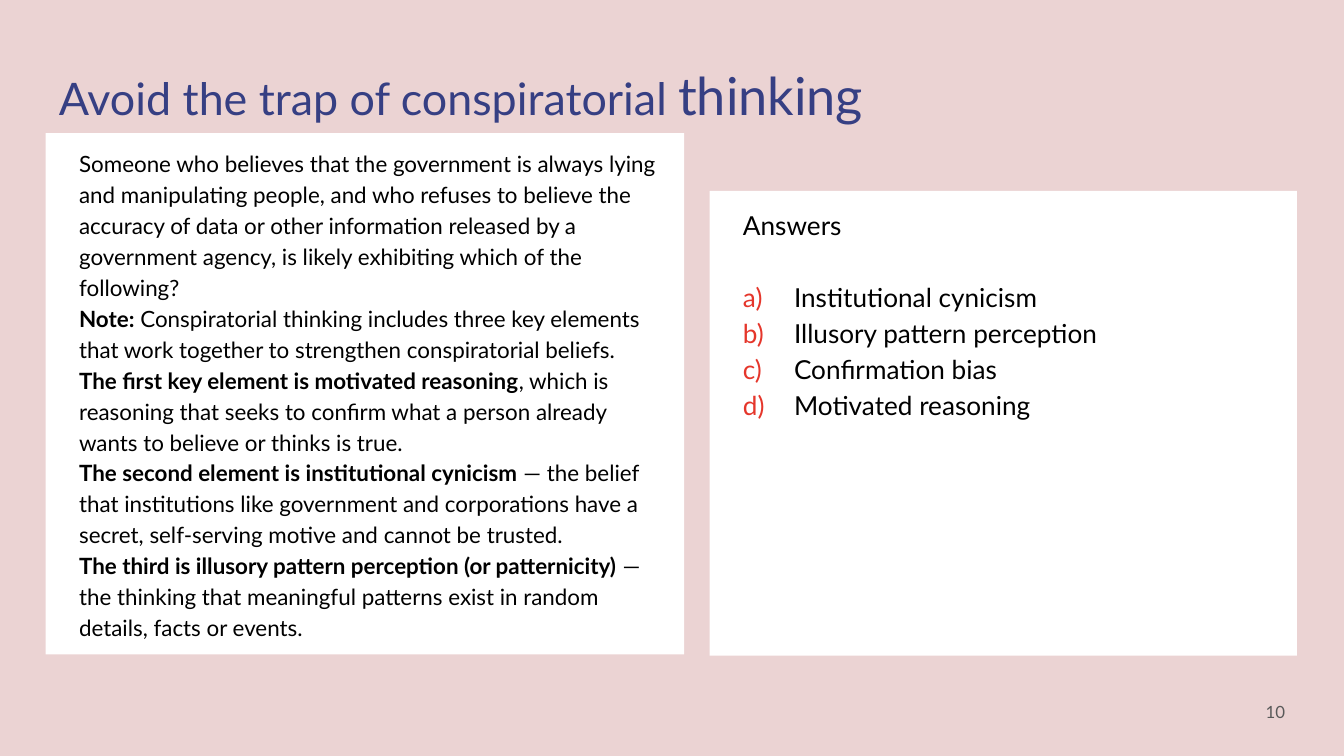
from copy import deepcopy

from lxml import etree
from pptx import Presentation
from pptx import util as u
from pptx.dml.color import RGBColor
from pptx.enum import shapes, text
from pptx.oxml.ns import qn

QUESTION = [
    [("Someone who believes that the government is always lying and manipulating "
      "people, and who refuses to believe the accuracy of data or other information "
      "released by a government agency, is likely exhibiting which of the following?", {})],
    [("Note:", {"bold": True}),
     (" Conspiratorial thinking includes three key elements that work together to "
      "strengthen conspiratorial beliefs.\n", {}),
     ("The first key element is motivated reasoning", {"bold": True}),
     (", which is reasoning that seeks to confirm what a person already wants to "
      "believe or thinks is true.\n", {}),
     ("The second element is institutional cynicism", {"bold": True}),
     (" — the belief that institutions like government and corporations have a "
      "secret, self-serving motive and cannot be trusted.\n", {}),
     ("The third is illusory pattern perception (or patternicity)", {"bold": True}),
     (" — the thinking that meaningful patterns exist in random details, facts or "
      "events.", {})],
]
ANSWERS = ["Institutional cynicism", "Illusory pattern perception",
           "Confirmation bias", "Motivated reasoning"]


def color(value):
    return RGBColor.from_string(value)


def apply(target, values):
    for name, value in values.items():
        setattr(target, name, value)


class SlideBuilder:
    font = "Lato"
    ink = "000000"
    accent = "E5362B"
    inset = u.Inches(0.1)
    line_spacing = 1.15

    def __init__(self, page, background):
        self.page = page
        page.background.fill.solid()
        page.background.fill.fore_color.rgb = color(background)

    def prepare(self, box, anchor=text.MSO_ANCHOR.TOP):
        frame = box.text_frame
        apply(frame, {"word_wrap": True, "vertical_anchor": anchor,
                      "auto_size": text.MSO_AUTO_SIZE.NONE})
        apply(frame, {f"margin_{side}": self.inset
                      for side in ("left", "top", "right", "bottom")})
        return frame

    def label(self, place, spans, ink, align=text.PP_ALIGN.LEFT,
              anchor=text.MSO_ANCHOR.TOP):
        box = self.page.shapes.add_textbox(*map(u.Inches, place))
        para = self.prepare(box, anchor).paragraphs[0]
        para.alignment = align
        for words, size in spans:
            self.span(para, words, size, ink)

    def panel(self, place):
        """Add a white box and return its text frame."""
        box = self.page.shapes.add_shape(shapes.MSO_SHAPE.RECTANGLE,
                                         *map(u.Inches, place))
        box.shadow.inherit = False
        box.fill.solid()
        box.fill.fore_color.rgb = color("FFFFFF")
        box.line.fill.background()
        return self.prepare(box)

    def paragraph(self, frame, spans, size, left=0.15, hanging=0, lettered=False,
                  before=0):
        para = frame.paragraphs[0]
        if para.runs:
            para = frame.add_paragraph()
        props = para._p.get_or_add_pPr()
        props.set("marL", str(u.Inches(left)))
        props.set("indent", str(-u.Inches(hanging)))
        if lettered:
            tint = etree.SubElement(props, qn("a:buClr"))
            etree.SubElement(tint, qn("a:srgbClr"), val=self.accent)
            etree.SubElement(props, qn("a:buFont"), typeface=self.font)
            etree.SubElement(props, qn("a:buAutoNum"), type="alphaLcParenR")
        apply(para, {"alignment": text.PP_ALIGN.LEFT,
                     "line_spacing": self.line_spacing,
                     "space_before": u.Pt(before)})
        for words, style in spans:
            self.span(para, words, size, self.ink, **style)

    def span(self, para, words, size, ink, **style):
        """Add a run; a closing newline becomes a line break of the same size."""
        run = para.add_run()
        run.text = words.rstrip("\n")
        apply(run.font, {"name": self.font, "size": u.Pt(size), **style})
        run.font.color.rgb = color(ink)
        if words.endswith("\n"):
            para.add_line_break()
            para._p[-1].append(deepcopy(run._r.rPr))


def main():
    deck = Presentation()
    deck.slide_width = u.Inches(10)
    deck.slide_height = deck.slide_width * 9 // 16
    slide = SlideBuilder(deck.slides.add_slide(deck.slide_layouts[6]), "EBD3D3")

    slide.label((0.34, 0.37, 7.02, 0.43),
                [("Avoid the trap of conspiratorial ", 24), ("thinking", 28)], "363F83")

    question = slide.panel((0.34, 0.99, 4.75, 3.88))
    for spans in QUESTION:
        slide.paragraph(question, spans, 12)

    answers = slide.panel((5.28, 1.42, 4.37, 3.46))
    slide.paragraph(answers, [("Answers", {})], 14)
    for index, answer in enumerate(ANSWERS):
        slide.paragraph(answers, [(answer, {})], 14, left=0.53, hanging=0.38,
                        lettered=True, before=0 if index else 19.3)

    slide.label((9.06, 5.08, 0.6, 0.43), [("10", 9)], "595959",
                text.PP_ALIGN.RIGHT, text.MSO_ANCHOR.MIDDLE)
    deck.save("out.pptx")


if __name__ == "__main__":
    main()
